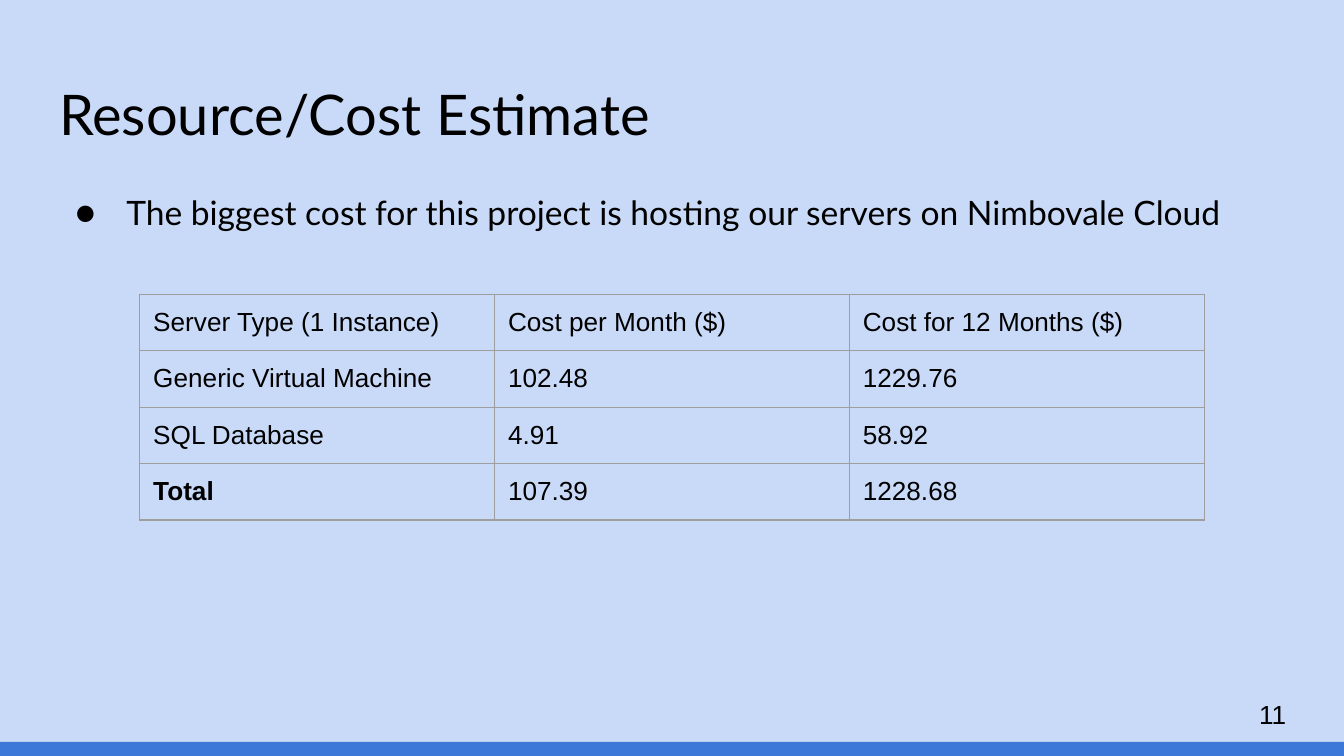
from dataclasses import dataclass

from lxml.etree import SubElement
from pptx import Presentation
from pptx.dml.color import RGBColor
from pptx.enum.shapes import MSO_SHAPE
from pptx.enum.text import MSO_ANCHOR, MSO_AUTO_SIZE, PP_ALIGN
from pptx.oxml.ns import qn
from pptx.util import Inches, Pt

INK = "000000"
SKY = "C9DAF8"
BLUE = "3C78D8"
GREY = "9E9E9E"
PAD = Inches(0.1)


@dataclass
class Box:
    left: float
    top: float
    width: float
    height: float

    def place(self) -> tuple:
        return tuple(Inches(v) for v in (self.left, self.top, self.width, self.height))


@dataclass
class Row:
    server: str
    month: str
    year: str
    bold: bool = False


ROWS = [
    Row("Server Type (1 Instance)", "Cost per Month ($)", "Cost for 12 Months ($)"),
    Row("Generic Virtual Machine", "102.48", "1229.76"),
    Row("SQL Database", "4.91", "58.92"),
    Row("Total", "107.39", "1228.68", bold=True),
]


def paint(fill, tint: str) -> None:
    fill.solid()
    fill.fore_color.rgb = RGBColor.from_string(tint)


def write(frame, text: str, *, size=14, font="Arial", tint=INK, bold=False):
    line = frame.paragraphs[0]
    line.alignment = PP_ALIGN.LEFT
    line.space_before = Pt(0)
    run = line.add_run()
    run.text = text
    run.font.size = Pt(size)
    run.font.name = font
    run.font.bold = bold
    run.font.color.rgb = RGBColor.from_string(tint)
    return line


def setup(shape, box: Box, anchor=MSO_ANCHOR.TOP):
    shape.left, shape.top, shape.width, shape.height = box.place()
    frame = shape.text_frame
    frame.word_wrap = True
    frame.auto_size = MSO_AUTO_SIZE.NONE
    frame.vertical_anchor = anchor
    frame.margin_left = frame.margin_right = PAD
    frame.margin_top = frame.margin_bottom = PAD
    return frame


def bullet(line, mark: str, left: float, hang: float) -> None:
    props = line._p.get_or_add_pPr()
    props.set("marL", str(Inches(left)))
    props.set("indent", str(Inches(-hang)))
    color = SubElement(props, qn("a:buClr"))
    SubElement(color, qn("a:srgbClr"), val=INK)
    SubElement(props, qn("a:buFont"), typeface="Lato")
    SubElement(props, qn("a:buChar"), char=mark)


def border(cell, tint: str, width: float) -> None:
    props = cell._tc.get_or_add_tcPr()
    for spot, side in enumerate("LRTB"):
        edge = SubElement(props, qn(f"a:ln{side}"), w=str(Pt(width)))
        fill = SubElement(edge, qn("a:solidFill"))
        SubElement(fill, qn("a:srgbClr"), val=tint)
        props.insert(spot, edge)


def draw_cell(cell, text: str, bold: bool) -> None:
    cell.margin_left = cell.margin_right = PAD
    cell.margin_top = cell.margin_bottom = PAD
    cell.fill.background()
    write(cell.text_frame, text, bold=bold)
    border(cell, GREY, 0.75)


def draw_table(slide, rows: list[Row], box: Box) -> None:
    table = slide.shapes.add_table(len(rows), 3, *box.place()).table
    table.first_row = False
    table.horz_banding = False
    for r, row in enumerate(rows):
        for c, text in enumerate((row.server, row.month, row.year)):
            draw_cell(table.cell(r, c), text, row.bold and c == 0)


def main() -> None:
    deck = Presentation()
    deck.slide_width = Inches(10)
    deck.slide_height = deck.slide_width * 9 // 16
    slide = deck.slides.add_slide(deck.slide_layouts[1])
    paint(slide.background.fill, SKY)

    band = slide.shapes.add_shape(MSO_SHAPE.RECTANGLE, *Box(0, 5.52, 10, 0.11).place())
    band.height = deck.slide_height - band.top
    band.shadow.inherit = False
    band.line.fill.background()
    paint(band.fill, BLUE)

    title = setup(slide.shapes.title, Box(0.34, 0.49, 9.32, 0.67))
    write(title, "Resource/Cost Estimate", size=30, font="Lato")

    body = setup(slide.placeholders[1], Box(0.34, 1.28, 9.32, 3.72))
    text = "The biggest cost for this project is hosting our servers on Nimbovale Cloud"
    line = write(body, text, size=18, font="Lato")
    line.line_spacing = 1.15
    line.space_after = Pt(16)
    bullet(line, "●", 0.5, 0.38)

    draw_table(slide, ROWS, Box(1.04, 2.19, 3 * 2.64, len(ROWS) * 0.42))

    spot = Box(9.27, 5.1, 0.6, 0.43)
    page = slide.shapes.add_textbox(*spot.place())
    write(setup(page, spot, MSO_ANCHOR.MIDDLE), "11")

    deck.save("out.pptx")


if __name__ == "__main__":
    main()
